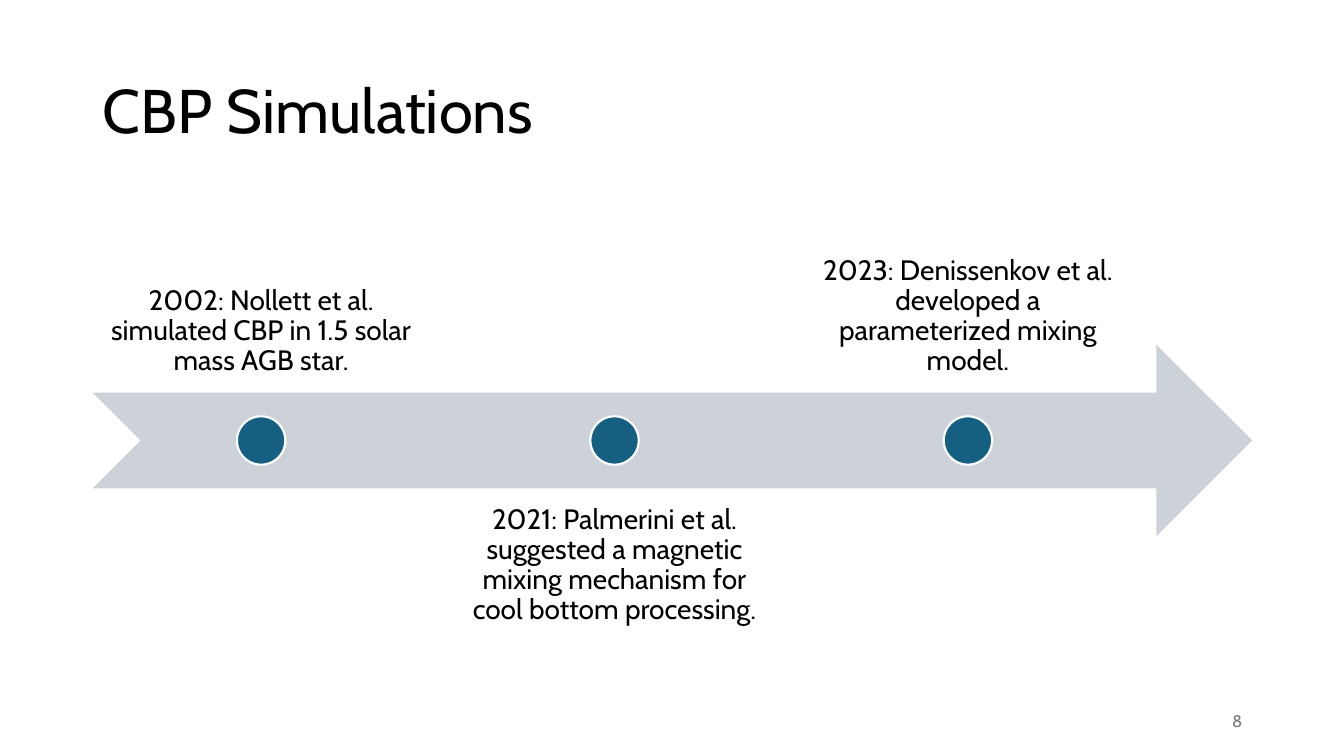
from pptx import Presentation
from pptx.dml.color import RGBColor
from pptx.enum.shapes import MSO_SHAPE
from pptx.enum.text import MSO_ANCHOR, PP_ALIGN
from pptx.util import Inches, Pt

ARROW, DOT = MSO_SHAPE.NOTCHED_RIGHT_ARROW, MSO_SHAPE.OVAL
TOP, MIDDLE, BOTTOM = MSO_ANCHOR.TOP, MSO_ANCHOR.MIDDLE, MSO_ANCHOR.BOTTOM
LEFT, CENTER, RIGHT = PP_ALIGN.LEFT, PP_ALIGN.CENTER, PP_ALIGN.RIGHT
TITLE_ONLY = 5

COLORS = {
    "text": "000000",
    "arrow": "CCD2D8",
    "dot": "156082",
    "outline": "FFFFFF",
    "number": "797979",
}
MILESTONES = [
    "2002: Nollett et al. simulated CBP in 1.5 solar mass AGB star.",
    "2021: Palmerini et al. suggested a magnetic mixing mechanism for cool bottom processing.",
    "2023: Denissenkov et al. developed a parameterized mixing model.",
]
MARGIN, CONTENT_WIDTH = 0.92, 11.5
ARROW_TOP, BAND = 3.42, 1.9
LABEL_WIDTH, LABEL_STEP, DOT_SIZE = 3.34, 3.505, 0.48
LABEL_ABOVE, LABEL_BELOW = 2, 4.85


def color(name):
    return RGBColor.from_string(COLORS[name])


def write(frame, text, font="Cabin", size=20, fill="text", align=LEFT,
          anchor=MIDDLE, spacing=1.0, inset=None):
    frame.word_wrap = True
    frame.vertical_anchor = anchor
    if inset is not None:
        frame.margin_left = frame.margin_right = Inches(inset)
        frame.margin_top = frame.margin_bottom = Inches(inset)
    paragraph = frame.paragraphs[0]
    paragraph.alignment = align
    paragraph.line_spacing = spacing
    run = paragraph.add_run()
    run.text = text
    run.font.name = font
    run.font.size = Pt(size)
    run.font.color.rgb = color(fill)


class SlideBuilder:
    def __init__(self, presentation):
        self.slide = presentation.slides.add_slide(presentation.slide_layouts[TITLE_ONLY])

    def title(self, text, left, top, width, height):
        shape = self.slide.shapes.title
        shape.left, shape.top = Inches(left), Inches(top)
        shape.width, shape.height = Inches(width), Inches(height)
        write(shape.text_frame, text, size=44, spacing=0.9)

    def shape(self, kind, left, top, width, height, fill, outline=None):
        shape = self.slide.shapes.add_shape(
            kind, Inches(left), Inches(top), Inches(width), Inches(height))
        shape.shadow.inherit = False
        shape.fill.solid()
        shape.fill.fore_color.rgb = color(fill)
        if outline:
            shape.line.color.rgb = color(outline)
            shape.line.width = Pt(1.5)
        else:
            shape.line.fill.background()

    def text(self, text, left, top, width, height, **style):
        box = self.slide.shapes.add_textbox(
            Inches(left), Inches(top), Inches(width), Inches(height))
        write(box.text_frame, text, **style)


def main():
    presentation = Presentation()
    presentation.slide_width = Inches(13.33)
    presentation.slide_height = Inches(7.5)
    builder = SlideBuilder(presentation)

    builder.title("CBP Simulations", MARGIN, 0.4, CONTENT_WIDTH, 1.45)
    builder.shape(ARROW, MARGIN, ARROW_TOP, CONTENT_WIDTH, BAND, "arrow")
    dot_top = ARROW_TOP + (BAND - DOT_SIZE) / 2
    for index, milestone in enumerate(MILESTONES):
        left = MARGIN + index * LABEL_STEP
        above = index % 2 == 0
        builder.text(milestone, left, LABEL_ABOVE if above else LABEL_BELOW,
                     LABEL_WIDTH, BAND, align=CENTER,
                     anchor=BOTTOM if above else TOP, spacing=0.9, inset=0.16)
        builder.shape(DOT, left + (LABEL_WIDTH - DOT_SIZE) / 2, dot_top,
                      DOT_SIZE, DOT_SIZE, "dot", outline="outline")
    builder.text("8", 9.42, 6.95, 3, 0.4, size=12, fill="number", align=RIGHT)

    presentation.save("out.pptx")


if __name__ == "__main__":
    main()
